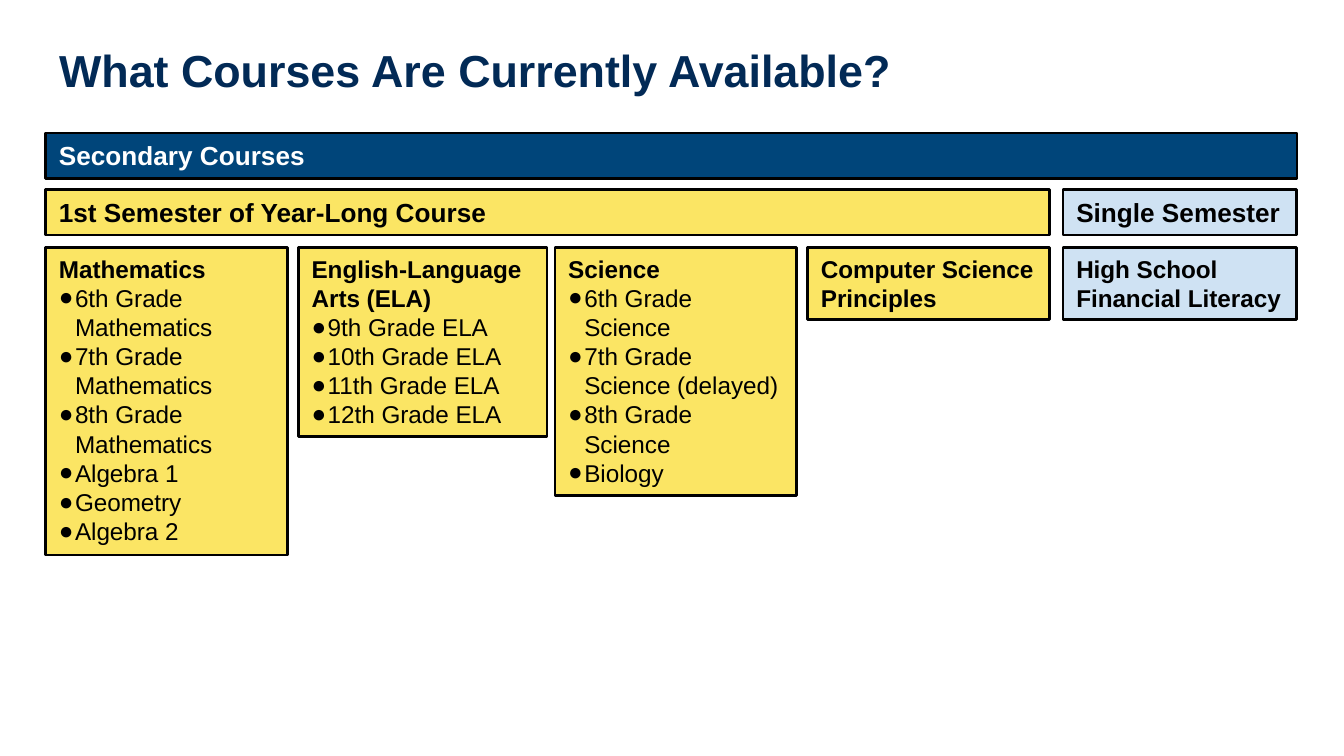
from dataclasses import dataclass

from lxml import etree
from pptx import Presentation
from pptx.dml.color import RGBColor
from pptx.enum import shapes, text
from pptx.oxml.ns import qn
from pptx.util import Inches, Pt


@dataclass(frozen=True)
class Theme:
    """Colours and type sizes of the slide."""
    font: str = "Arial"
    title: str = "022A56"
    navy: str = "00457A"
    gold: str = "FBE564"
    sky: str = "CFE2F3"
    ink: str = "000000"
    white: str = "FFFFFF"
    big: int = 24
    head: int = 14
    body: int = 13


class Deck:
    """Draws styled elements on the current slide."""

    def __init__(self, theme, wide, high):
        self.theme = theme
        self.prs = Presentation()
        self.prs.slide_width, self.prs.slide_height = Inches(wide), Inches(high)
        self.slide = self.prs.slides.add_slide(self.prs.slide_layouts[5])

    def run(self, para, words, size, color, bold=True):
        """Add one styled run."""
        run = para.add_run()
        run.text = words
        font = run.font
        font.name, font.size, font.bold = self.theme.font, Pt(size), bold
        font.color.rgb = RGBColor.from_string(color)

    def inset(self, frame, side, edge):
        """Set the margins of a text frame."""
        frame.word_wrap = True
        frame.vertical_anchor = text.MSO_ANCHOR.TOP
        frame.margin_left = frame.margin_right = Inches(side)
        frame.margin_top = frame.margin_bottom = Inches(edge)

    def title(self, words, left, top, width, height):
        """Place and fill the title."""
        shape = self.slide.shapes.title
        shape.left, shape.top = Inches(left), Inches(top)
        shape.width, shape.height = Inches(width), Inches(height)
        frame = shape.text_frame
        self.inset(frame, 0.1, 0.1)
        frame.auto_size = text.MSO_AUTO_SIZE.NONE
        para = frame.paragraphs[0]
        para.alignment = text.PP_ALIGN.LEFT
        self.run(para, words, self.theme.big, self.theme.title)

    def bullet(self, para):
        """Give a paragraph a hanging round bullet."""
        props = para._p.get_or_add_pPr()
        props.set("marL", str(Inches(0.12)))
        props.set("indent", str(Inches(-0.15)))
        color = etree.SubElement(props, qn("a:buClr"))
        etree.SubElement(color, qn("a:srgbClr"), val=self.theme.ink)
        etree.SubElement(props, qn("a:buFont"), typeface=self.theme.font)
        etree.SubElement(props, qn("a:buChar"), char="●")

    def box(self, place, fill, name, size, color, items=()):
        """Add an outlined box with a bold heading and bulleted items."""
        shape = self.slide.shapes.add_shape(
            shapes.MSO_SHAPE.RECTANGLE, *map(Inches, place))
        shape.shadow.inherit = False
        shape.fill.solid()
        shape.fill.fore_color.rgb = RGBColor.from_string(fill)
        shape.line.color.rgb = RGBColor.from_string(self.theme.ink)
        shape.line.width = Pt(1.5)
        frame = shape.text_frame
        self.inset(frame, 0.1, 0.05)
        frame.auto_size = text.MSO_AUTO_SIZE.SHAPE_TO_FIT_TEXT
        para = frame.paragraphs[0]
        para.alignment = text.PP_ALIGN.LEFT
        self.run(para, name, size, color)
        for item in items:
            para = frame.add_paragraph()
            para.alignment = text.PP_ALIGN.LEFT
            self.bullet(para)
            self.run(para, item, size, color, False)


def main():
    """Build the course overview."""
    look = Theme()
    deck = Deck(look, 10, 10 * 9 / 16)
    left, full, year, last, single = 0.34, 9.31, 7.47, 7.91, 1.74
    deck.title("What Courses Are Currently Available?", left, 0.22, full, 0.63)

    grades = ("6th Grade", "7th Grade", "8th Grade")
    maths = [f"{grade} Mathematics" for grade in grades]
    lab = [f"{grade} Science" for grade in grades]
    lab[1] += " (delayed)"
    cards = [
        (left, 1.8, 2.29, look.gold, "Mathematics",
         maths + ["Algebra 1", "Geometry", "Algebra 2"]),
        (2.22, 1.85, 1.41, look.gold, "English-Language Arts (ELA)",
         [f"{grade}th Grade ELA" for grade in range(9, 13)]),
        (6.01, 1.8, 0.54, look.gold, "Computer Science Principles", []),
        (last, single, 0.54, look.sky, "High School Financial Literacy", []),
        (4.13, 1.8, 1.85, look.gold, "Science", lab + ["Biology"]),
    ]
    for x, width, height, fill, name, items in cards:
        deck.box((x, 1.84, width, height), fill, name, look.body, look.ink, items)

    bands = [
        (left, 1.41, year, look.gold, "1st Semester of Year-Long Course", look.ink),
        (last, 1.41, single, look.sky, "Single Semester", look.ink),
        (left, 0.99, full, look.navy, "Secondary Courses", look.white),
    ]
    for x, y, width, fill, name, color in bands:
        deck.box((x, y, width, 0.34), fill, name, look.head, color)
    deck.prs.save("out.pptx")


if __name__ == "__main__":
    main()
